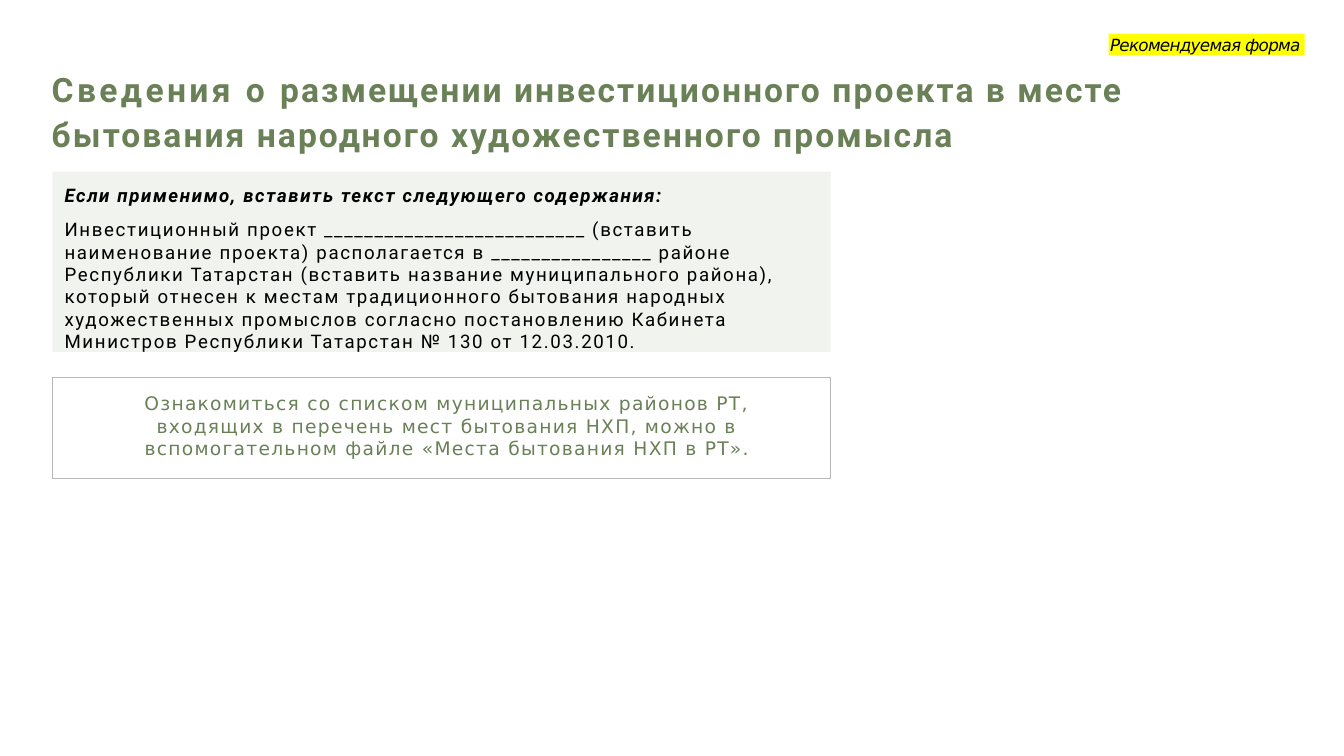
from pptx import Presentation
from pptx.dml.color import RGBColor
from pptx.enum.shapes import MSO_SHAPE
from pptx.enum.text import MSO_ANCHOR, MSO_AUTO_SIZE, PP_ALIGN
from pptx.oxml.ns import qn
from pptx.util import Pt
from lxml import etree

COLORS = {
    "green": "6A8157",
    "black": "000000",
    "gray": "B7B7B7",
    "yellow": "FFFF00",
}
LEFT, WIDTH = 28.1, 416.9


class SlideBuilder:
    def __init__(self, prs):
        self.s = prs.slides.add_slide(prs.slide_layouts[5])
        self.heading_font = "Roboto"
        self.note_font = "DejaVu Sans"

    def color(self, name):
        return RGBColor.from_string(COLORS[name])

    def frame(self, sp, top=0, anchor=MSO_ANCHOR.TOP):
        tf = sp.text_frame
        tf.word_wrap = True
        tf.auto_size = MSO_AUTO_SIZE.NONE
        tf.vertical_anchor = anchor
        tf.margin_left = tf.margin_right = tf.margin_bottom = 0
        tf.margin_top = Pt(top)
        return tf

    def format(self, p, size, font, color, spacing, indent=0,
               align=PP_ALIGN.LEFT, bold=False, italic=False):
        p.alignment = align
        if indent:
            p._p.get_or_add_pPr().set("marL", str(Pt(indent)))
        for r in p.runs:
            r.font.size = Pt(size)
            r.font.name = font
            r.font.bold, r.font.italic = bold, italic
            r.font.color.rgb = self.color(color)
            self.track(r, spacing)

    def track(self, r, spacing):
        """Set the letter spacing of a run, in points."""
        r.font._element.set("spc", str(round(spacing * 100)))

    def title(self, lead, rest, x, y, w, h):
        sp = self.s.shapes.title
        sp.left, sp.top, sp.width, sp.height = Pt(x), Pt(y), Pt(w), Pt(h)
        p = self.frame(sp, anchor=MSO_ANCHOR.MIDDLE).paragraphs[0]
        p.text = lead
        p.add_run().text = rest
        p.line_spacing = 1.13
        self.format(p, 18, self.heading_font, "green", 1.1, 0.7, bold=True)
        self.track(p.runs[0], 1.8)

    def rectangle(self, x, y, w, h, fill=None, opacity=None, line=None):
        sp = self.s.shapes.add_shape(MSO_SHAPE.RECTANGLE, Pt(x), Pt(y), Pt(w), Pt(h))
        sp.shadow.inherit = False
        if fill:
            sp.fill.solid()
            sp.fill.fore_color.rgb = self.color(fill)
        else:
            sp.fill.background()
        if opacity:
            clr = sp._element.spPr.find(".//" + qn("a:srgbClr"))
            etree.SubElement(clr, qn("a:alpha"), val=str(opacity * 1000))
        if line:
            sp.line.color.rgb = self.color(line)
            sp.line.width = Pt(0.75)
        else:
            sp.line.fill.background()
        return sp

    def template_panel(self, heading, body, x, y, w, h):
        sp = self.rectangle(x, y, w, h, "green", opacity=9)
        tf = self.frame(sp, top=6.5)
        tf.text = heading + "\n" + body
        for p, strong in zip(tf.paragraphs, (True, False)):
            self.format(p, 10, self.heading_font, "black", 0.9, 6.5,
                        bold=strong, italic=strong)
        tf.paragraphs[1].space_before = Pt(6.3)

    def note(self, text, x, y, w, h):
        sp = self.s.shapes.add_textbox(Pt(x), Pt(y), Pt(w), Pt(h))
        tf = self.frame(sp, top=10.8)
        tf.text = text
        self.format(tf.paragraphs[0], 10, self.note_font, "green", 0.7, 13,
                    align=PP_ALIGN.CENTER)

    def tag(self, text, x, y, w, h):
        tf = self.frame(self.rectangle(x, y, w, h, "yellow"), top=0.7)
        tf.text = text
        self.format(tf.paragraphs[0], 9, self.note_font, "black", -0.4, 0.7, italic=True)


def main():
    prs = Presentation()
    prs.slide_width, prs.slide_height = Pt(720), Pt(405)
    b = SlideBuilder(prs)
    b.title("Сведения о ",
            "размещении инвестиционного проекта в месте бытования "
            "народного художественного промысла",
            27, 26.6, 610, 63.4)
    b.template_panel(
        "Если применимо, вставить текст следующего содержания:",
        "Инвестиционный проект __________________________ (вставить "
        "наименование проекта) располагается в ________________ районе "
        "Республики Татарстан (вставить название муниципального района), "
        "который отнесен к местам традиционного бытования народных "
        "художественных промыслов согласно постановлению Кабинета "
        "Министров Республики Татарстан № 130 от 12.03.2010.",
        LEFT, 92, WIDTH, 96.5)
    b.note("Ознакомиться со списком муниципальных районов РТ, входящих в "
           "перечень мест бытования НХП, можно в вспомогательном файле "
           "«Места бытования НХП в РТ».",
           45.4, 199.4, 375, 47)
    b.rectangle(LEFT, 202.3, WIDTH, 54, line="gray")
    b.tag("Рекомендуемая форма", 594, 18, 105, 11.5)
    prs.save("out.pptx")


if __name__ == "__main__":
    main()
